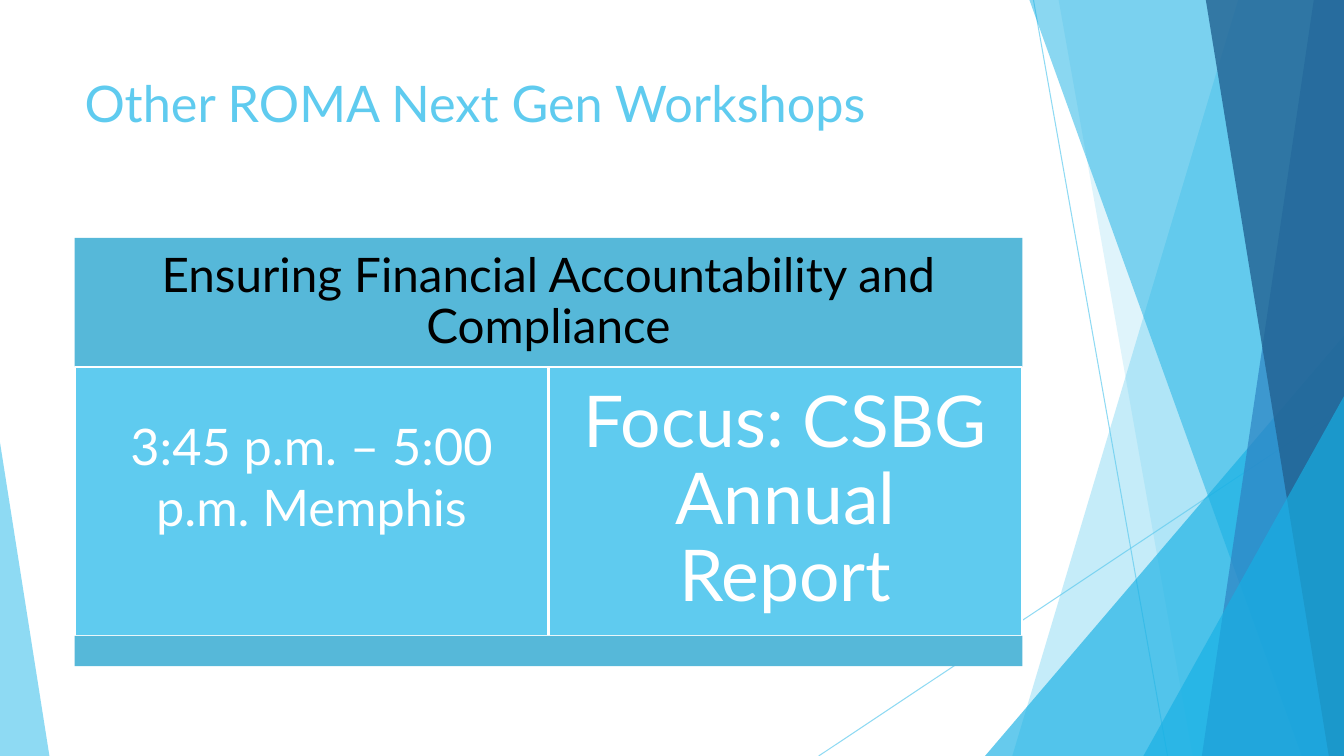
from lxml import etree
from pptx import Presentation, util as u
from pptx.dml.color import RGBColor
from pptx.enum import shapes, text
from pptx.oxml.ns import qn

# Content
TITLE = "Other ROMA Next Gen Workshops"
WORKSHOP = "Ensuring Financial Accountability and Compliance"
TIME_PLACE = "3:45 p.m. – 5:00 p.m. Memphis"
FOCUS = "Focus: CSBG Annual Report"

FONT = "Lato"
SKY = RGBColor(0x5F, 0xCB, 0xEF)
STEEL = RGBColor(0x56, 0xB8, 0xD9)
CYAN = RGBColor(0x17, 0xB0, 0xE4)
BLUE = RGBColor(0x2E, 0x83, 0xC3)
NAVY = RGBColor(0x22, 0x62, 0x92)
WHITE = RGBColor(0xFF, 0xFF, 0xFF)
BLACK = RGBColor(0, 0, 0)

W, H = 13.33, 7.5

# Backdrop: rays (from, to); bands (x at top, x at foot, colour, opacity %)
RAYS = [((10.25, 0), (11.58, H)), ((W, 4.03), (8.12, H))]
BACK_BANDS = [(12.28, 10.04, SKY, 36), (10.5, 11.83, SKY, 20)]
FRONT_BANDS = [(10.21, 12.91, CYAN, 50), (13.03, 11.92, BLUE, 70),
               (11.96, 13.18, NAVY, 80)]
# Peaks standing on the foot: left, width, height, apex share, colour, opacity %
BACK_PEAK = (9.77, 3.56, 4.17, 1, CYAN, 66)
FRONT_PEAK = (11.34, 1.99, 3.57, 1, CYAN, 66)
LEFT_PEAK = (0, 0.49, 3.11, 0, SKY, 70)

# Workshop panel: two columns, three rows
LEFT, TOP, PANEL_W = 0.74, 2.36, 9.4
COLUMN_W = PANEL_W / 2
HEADER_H, BODY_H, FOOTER_H = 1.28, 2.67, 0.3
BODY_TOP = TOP + HEADER_H

prs = Presentation()
prs.slide_width, prs.slide_height = u.Inches(W), u.Inches(H)
slide = prs.slides.add_slide(prs.slide_layouts[6])


def set_opacity(part, percent):
    for colour in part._element.spPr.iter(qn("a:srgbClr")):
        etree.SubElement(colour, qn("a:alpha"), val=str(percent * 1000))


def paint(part, colour, opacity=100):
    part.shadow.inherit = False
    part.fill.solid()
    part.fill.fore_color.rgb = colour
    part.line.fill.background()
    if opacity < 100:
        set_opacity(part, opacity)


def add_ray(start, end):
    ray = slide.shapes.add_connector(
        shapes.MSO_CONNECTOR.STRAIGHT, *map(u.Inches, start + end))
    ray.line.color.rgb = SKY
    ray.line.width = u.Pt(0.75)
    set_opacity(ray, 70)
    etree.SubElement(ray._element.spPr, qn("a:effectLst"))


def add_band(top_x, foot_x, colour, opacity):
    outline = slide.shapes.build_freeform(
        u.Inches(top_x), 0, scale=1.0)
    outline.add_line_segments(
        [(u.Inches(x), u.Inches(y)) for x, y in [(W, 0), (W, H), (foot_x, H)]])
    paint(outline.convert_to_shape(), colour, opacity)


def add_peak(left, width, height, apex, colour, opacity):
    peak = slide.shapes.add_shape(
        shapes.MSO_SHAPE.ISOSCELES_TRIANGLE,
        *map(u.Inches, (left, H - height, width, height)))
    peak.adjustments[0] = apex
    paint(peak, colour, opacity)


def write(part, words, size, colour, inset, bottom=None, spacing=None,
          align=text.PP_ALIGN.CENTER, anchor=text.MSO_ANCHOR.MIDDLE):
    frame = part.text_frame
    frame.word_wrap = True
    frame.vertical_anchor = anchor
    frame.margin_left = frame.margin_right = u.Inches(inset[0])
    frame.margin_top = u.Inches(inset[1])
    frame.margin_bottom = u.Inches(bottom or inset[1])
    paragraph = frame.paragraphs[0]
    paragraph.alignment = align
    if spacing:
        paragraph.line_spacing = spacing
    run = paragraph.add_run()
    run.text = words
    run.font.name, run.font.size = FONT, u.Pt(size)
    run.font.color.rgb = colour


def add_cell(left, top, width, height, colour, bordered=False):
    cell = slide.shapes.add_shape(
        shapes.MSO_SHAPE.RECTANGLE, *map(u.Inches, (left, top, width, height)))
    paint(cell, colour)
    if bordered:
        cell.line.color.rgb = WHITE
        cell.line.width = u.Pt(1.5)
    return cell


# Backdrop
for ray_ends in RAYS:
    add_ray(*ray_ends)
for band in BACK_BANDS:
    add_band(*band)
add_peak(*BACK_PEAK)
for band in FRONT_BANDS:
    add_band(*band)
add_peak(*FRONT_PEAK)
add_peak(*LEFT_PEAK)

# Title
title = slide.shapes.add_textbox(*map(u.Inches, (LEFT, 0.67, PANEL_W, 1.44)))
write(title, TITLE, 36, SKY, (0.1, 0.05),
      align=text.PP_ALIGN.LEFT, anchor=text.MSO_ANCHOR.TOP)

# Workshop panel
header = add_cell(LEFT, TOP, PANEL_W, HEADER_H, STEEL)
write(header, WORKSHOP, 34, BLACK, (0.14, 0.14), spacing=0.9)

time_place = add_cell(LEFT, BODY_TOP, COLUMN_W, BODY_H, SKY, bordered=True)
write(time_place, TIME_PLACE, 36, WHITE, (0.15, 0.15), bottom=0.66)

focus = add_cell(LEFT + COLUMN_W, BODY_TOP, COLUMN_W, BODY_H, SKY, bordered=True)
write(focus, FOCUS, 51, WHITE, (0.21, 0.21), spacing=0.9)

add_cell(LEFT, BODY_TOP + BODY_H, PANEL_W, FOOTER_H, STEEL)

prs.save("out.pptx")
